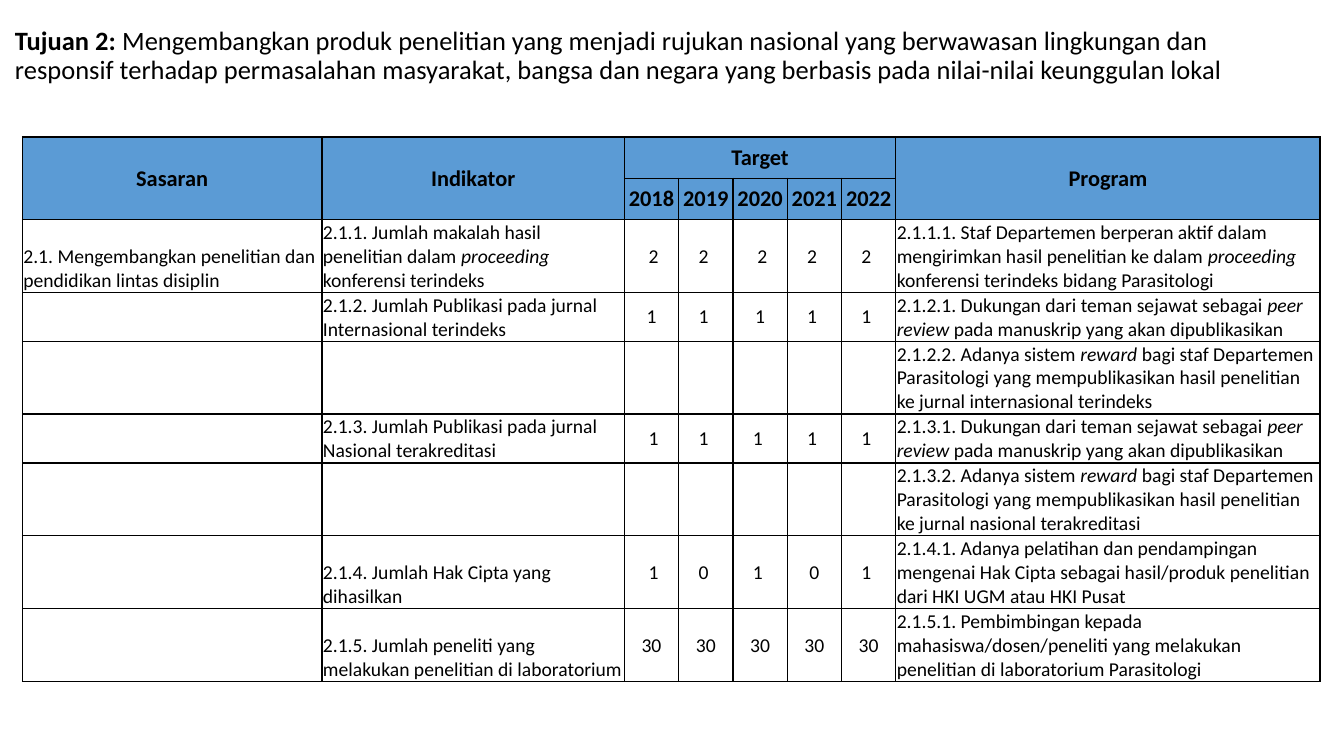
from lxml.etree import SubElement as Sub
from pptx import Presentation
from pptx.dml.color import RGBColor
from pptx.enum.text import MSO_ANCHOR as Anchor, PP_ALIGN as Align
from pptx.oxml.ns import qn
from pptx.util import Pt

FONT, BLACK, BLUE = "Calibri", "000000", "5B9BD5"
YEARS = ["2018", "2019", "2020", "2021", "2022"]
WIDTHS = [214, 216] + [38.8] * len(YEARS) + [303]
HEAD = 29.5
TITLE = (
    "Mengembangkan produk penelitian yang menjadi rujukan nasional yang berwawasan "
    "lingkungan dan responsif terhadap permasalahan masyarakat, bangsa dan negara "
    "yang berbasis pada nilai-nilai keunggulan lokal"
)
NONE = [""] * len(YEARS)
ROWS = [
    (52, "2.1. Mengembangkan penelitian dan pendidikan lintas disiplin",
     "2.1.1. Jumlah makalah hasil penelitian dalam *proceeding *konferensi terindeks",
     [" 2", "2 ", " 2", "2 ", "2 "],
     "2.1.1.1. Staf Departemen berperan aktif dalam mengirimkan hasil penelitian "
     "ke dalam *proceeding *konferensi terindeks bidang Parasitologi"),
    (35, "", "2.1.2. Jumlah Publikasi pada jurnal Internasional terindeks",
     [" 1 ", "1 ", " 1 ", "1 ", "1 "],
     "2.1.2.1. Dukungan dari teman sejawat sebagai *peer review *pada manuskrip "
     "yang akan dipublikasikan"),
    (52, "", "", NONE,
     "2.1.2.2. Adanya sistem *reward *bagi staf Departemen Parasitologi yang "
     "mempublikasikan hasil penelitian ke jurnal internasional terindeks"),
    (35, "", "2.1.3. Jumlah Publikasi pada jurnal Nasional terakreditasi",
     [" 1", "1 ", "1 ", "1 ", "1 "],
     "2.1.3.1. Dukungan dari teman sejawat sebagai *peer review *pada manuskrip "
     "yang akan dipublikasikan"),
    (52, "", "", NONE,
     "2.1.3.2. Adanya sistem *reward *bagi staf Departemen Parasitologi yang "
     "mempublikasikan hasil penelitian ke jurnal nasional terakreditasi"),
    (52, "", "2.1.4. Jumlah Hak Cipta yang dihasilkan",
     [" 1", "0 ", "1 ", "0", "1 "],
     "2.1.4.1. Adanya pelatihan dan pendampingan mengenai Hak Cipta sebagai "
     "hasil/produk penelitian dari HKI UGM atau HKI Pusat"),
    (52, "", "2.1.5. Jumlah peneliti yang melakukan penelitian di laboratorium",
     ["30"] * len(YEARS),
     "2.1.5.1. Pembimbingan kepada mahasiswa/dosen/peneliti yang melakukan "
     "penelitian di laboratorium Parasitologi"),
]


def color(code):
    """Turn a hex string into a colour."""
    return RGBColor.from_string(code)


def add_run(para, text, size, bold=False, slant=False):
    """Add one run of black text."""
    run = para.add_run()
    run.text = text
    font = run.font
    font.name, font.size, font.bold, font.italic = FONT, Pt(size), bold, slant
    font.color.rgb = color(BLACK)


def add_title(slide):
    """Add the goal statement at the top."""
    box = slide.shapes.add_textbox(Pt(3.6), Pt(5), Pt(877.7), Pt(70.6))
    frame = box.text_frame
    frame.word_wrap = True
    frame.vertical_anchor = Anchor.MIDDLE
    para = frame.paragraphs[0]
    para.line_spacing = 0.9
    add_run(para, "Tujuan 2: ", 18.9, bold=True)
    add_run(para, TITLE, 18.9)


def set_edges(cell):
    """Draw thin black borders on all four sides."""
    props = cell._tc.get_or_add_tcPr()
    for side in ("lnL", "lnR", "lnT", "lnB"):
        line = Sub(props, qn("a:" + side), w=str(Pt(1)))
        fill = Sub(line, qn("a:solidFill"))
        Sub(fill, qn("a:srgbClr"), val=BLACK)


def style(cell, fill=None):
    """Set the margins, borders and fill of a cell."""
    cell.margin_left = cell.margin_right = cell.margin_top = Pt(0.7)
    cell.margin_bottom = Pt(0)
    set_edges(cell)
    if fill:
        cell.fill.solid()
        cell.fill.fore_color.rgb = color(fill)
    else:
        cell.fill.background()


def write(cell, text, size=14, bold=False, mid=False):
    """Write text in a cell, with starred parts in italics."""
    cell.vertical_anchor = Anchor.MIDDLE if mid else Anchor.BOTTOM
    para = cell.text_frame.paragraphs[0]
    para.alignment = Align.CENTER if mid else Align.LEFT
    for i, part in enumerate(text.split("*")):
        if part:
            add_run(para, part, size, bold, slant=i % 2 == 1)


def fill_head(table):
    """Merge and label the two header rows."""
    last = len(WIDTHS) - 1
    for col, label in ((0, "Sasaran"), (1, "Indikator"), (last, "Program")):
        table.cell(0, col).merge(table.cell(1, col))
        write(table.cell(0, col), label, 16, True, True)
    table.cell(0, 2).merge(table.cell(0, last - 1))
    write(table.cell(0, 2), "Target", 16, True, True)
    for col, year in enumerate(YEARS, 2):
        write(table.cell(1, col), year, 16, True, True)


def add_plan(slide):
    """Add the table of aims, targets and programmes."""
    highs = [HEAD, HEAD] + [row[0] for row in ROWS]
    table = slide.shapes.add_table(
        len(highs), len(WIDTHS), Pt(16), Pt(97.8), Pt(sum(WIDTHS)), Pt(sum(highs))
    ).table
    table.first_row = table.horz_banding = False
    for col, width in zip(table.columns, WIDTHS):
        col.width = Pt(width)
    for i, (row, high) in enumerate(zip(table.rows, highs)):
        row.height = Pt(high)
        for cell in row.cells:
            style(cell, BLUE if i < 2 else None)
    fill_head(table)
    for i, (_, aim, mark, goals, plan) in enumerate(ROWS, 2):
        for j, text in enumerate([aim, mark, *goals, plan]):
            write(table.cell(i, j), text, mid=2 <= j < len(WIDTHS) - 1)


def main():
    """Build and save the slide."""
    deck = Presentation()
    deck.slide_width, deck.slide_height = Pt(960), Pt(540)
    slide = deck.slides.add_slide(deck.slide_layouts[6])
    add_title(slide)
    add_plan(slide)
    deck.save("out.pptx")


if __name__ == "__main__":
    main()
